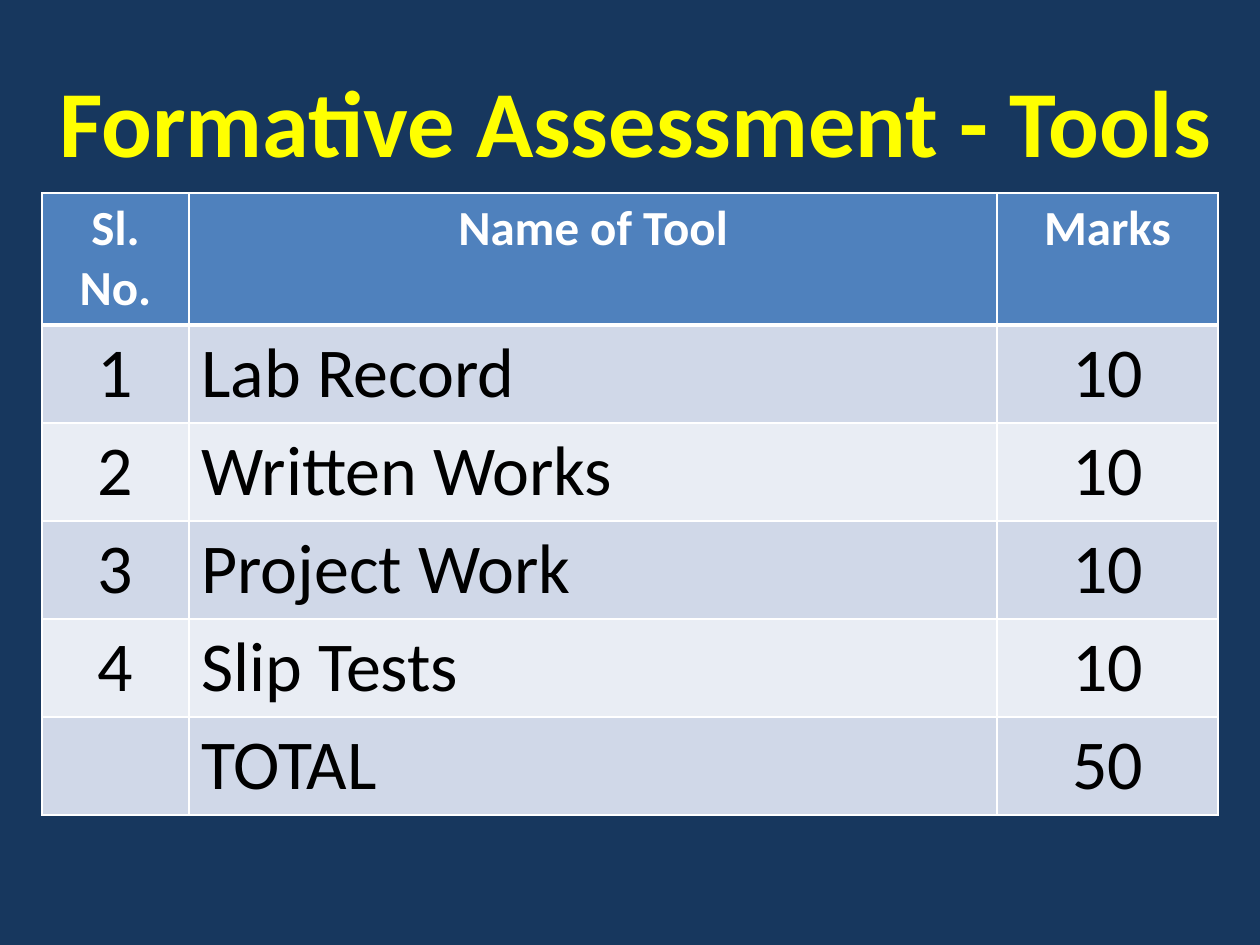
"""Build the Formative Assessment tools slide."""
from lxml import etree
from pptx import Presentation
from pptx.dml.color import RGBColor
from pptx.enum.text import MSO_ANCHOR, PP_ALIGN
from pptx.oxml.ns import qn
from pptx.util import Pt

CENTER, LEFT = PP_ALIGN.CENTER, PP_ALIGN.LEFT
MIDDLE = MSO_ANCHOR.MIDDLE
NAVY = RGBColor(0x17, 0x37, 0x5E)
YELLOW = RGBColor(0xFF, 0xFF, 0x00)
WHITE = RGBColor(0xFF, 0xFF, 0xFF)
BLACK = RGBColor(0x00, 0x00, 0x00)
BLUE = RGBColor(0x4F, 0x81, 0xBD)
BANDS = (RGBColor(0xD0, 0xD8, 0xE8), RGBColor(0xE9, 0xED, 0xF4))

TITLE = "Formative Assessment - Tools"
ROWS = [
    ("Sl. No.", "Name of Tool", "Marks"),
    ("1", "Lab Record", "10"),
    ("2", "Written Works", "10"),
    ("3", "Project Work", "10"),
    ("4", "Slip Tests", "10"),
    ("", "TOTAL", "50"),
]
ALIGNMENTS = (CENTER, LEFT, CENTER)
COLUMN_WIDTHS = (147, 808, 221)
HEADER_HEIGHT, BODY_HEIGHT = 132, 98
TABLE_LEFT, TABLE_TOP = 42, 193


def px(length):
    return round(length * 914400 / 126)


def write(frame, text, size, color, bold, alignment):
    frame.text = text
    para = frame.paragraphs[0]
    para.alignment = alignment
    for font in [para.font] + [span.font for span in para.runs]:
        font.name, font.size, font.bold = "Calibri", Pt(size), bold
        font.color.rgb = color


def add_border(cell, side, points):
    line = etree.SubElement(cell._tc.get_or_add_tcPr(), qn(f"a:ln{side}"), w=str(Pt(points)))
    fill = etree.SubElement(line, qn("a:solidFill"))
    etree.SubElement(fill, qn("a:srgbClr"), val=str(WHITE))


def add_title(slide):
    box = slide.shapes.add_textbox(px(21), px(18), px(1229), px(203))
    frame = box.text_frame
    frame.word_wrap = True
    frame.vertical_anchor = MIDDLE
    write(frame, TITLE, 54, YELLOW, True, CENTER)


def add_tools_table(slide):
    heights = [HEADER_HEIGHT] + [BODY_HEIGHT] * (len(ROWS) - 1)
    table = slide.shapes.add_table(
        len(ROWS), len(COLUMN_WIDTHS), px(TABLE_LEFT), px(TABLE_TOP),
        px(sum(COLUMN_WIDTHS)), px(sum(heights))).table
    for column, width in zip(table.columns, COLUMN_WIDTHS):
        column.width = px(width)
    for r, (texts, height) in enumerate(zip(ROWS, heights)):
        table.rows[r].height = px(height)
        header = r == 0
        for c, text in enumerate(texts):
            cell = table.cell(r, c)
            for side in "LRTB":
                heavy = (header and side == "B") or (r == 1 and side == "T")
                add_border(cell, side, 3 if heavy else 1)
            cell.fill.solid()
            cell.fill.fore_color.rgb = BLUE if header else BANDS[(r - 1) % 2]
            if header:
                write(cell.text_frame, text, 28, WHITE, True, CENTER)
            else:
                write(cell.text_frame, text, 40, BLACK, False, ALIGNMENTS[c])


def main():
    deck = Presentation()
    deck.slide_width, deck.slide_height = px(1260), px(945)
    slide = deck.slides.add_slide(deck.slide_layouts[6])
    slide.background.fill.solid()
    slide.background.fill.fore_color.rgb = NAVY
    add_title(slide)
    add_tools_table(slide)
    deck.save("out.pptx")


if __name__ == "__main__":
    main()
